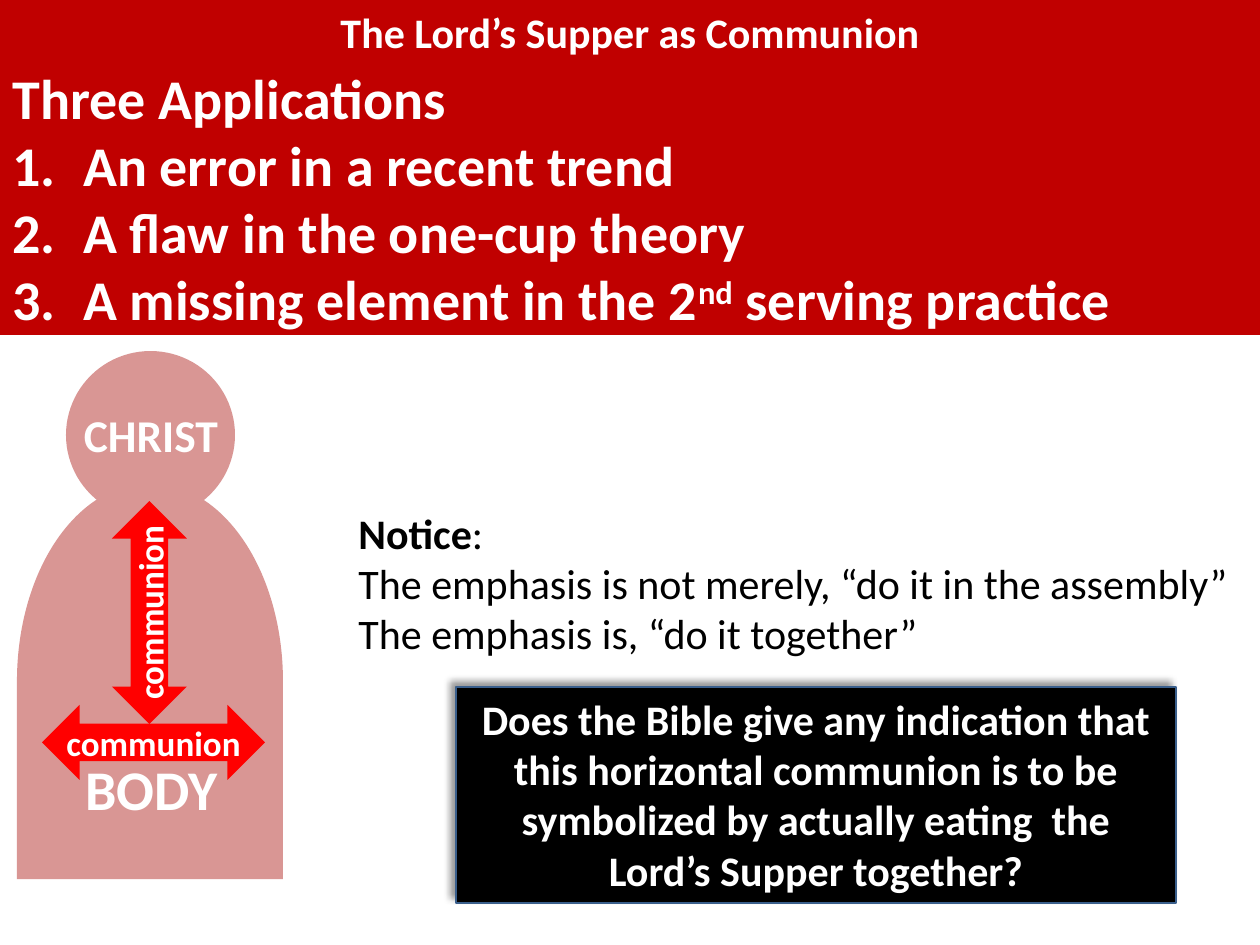
from dataclasses import dataclass

from pptx import Presentation, util as u
from pptx.dml.color import RGBColor
from pptx.enum import shapes as sh, text as tx
from pptx.oxml import parse_xml
from pptx.oxml.ns import nsdecls, qn

SCALE = 914400 / 126
RED = RGBColor(0xC0, 0x00, 0x00)
PINK = RGBColor(0xD9, 0x96, 0x94)
BRIGHT = RGBColor(0xFF, 0x00, 0x00)
BLACK = RGBColor(0x00, 0x00, 0x00)
WHITE = RGBColor(0xFF, 0xFF, 0xFF)
BLUE = RGBColor(0x3A, 0x5F, 0x8C)
KIND = sh.MSO_SHAPE
LEFT, MID = tx.PP_ALIGN.LEFT, tx.PP_ALIGN.CENTER


@dataclass(frozen=True)
class Box:
    x: int
    y: int
    w: int
    h: int

    def emu(self) -> tuple[u.Emu, ...]:
        return tuple(u.Emu(round(n * SCALE)) for n in (self.x, self.y, self.w, self.h))


@dataclass(frozen=True)
class Part:
    text: str
    bold: bool = True
    lift: int = 0


@dataclass(frozen=True)
class Label:
    box: Box
    text: str
    size: int


Lines = list[list[Part]]


def write(frame, lines: Lines, size: int, color: RGBColor, align) -> None:
    frame.auto_size = tx.MSO_AUTO_SIZE.NONE
    for i, parts in enumerate(lines):
        para = frame.add_paragraph() if i else frame.paragraphs[0]
        para.alignment = align
        para.space_before = u.Pt(0)
        for part in parts:
            run = para.add_run()
            run.text = part.text
            font = run.font
            font.name, font.size, font.bold = "Calibri", u.Pt(size), part.bold
            font.color.rgb = color
            if part.lift:
                run._r.get_or_add_rPr().set("baseline", str(part.lift * 1000))


def fill(shape, color: RGBColor) -> None:
    shape.fill.solid()
    shape.fill.fore_color.rgb = color


def add_form(slide, kind, box: Box, color: RGBColor, turn: int = 0):
    form = slide.shapes.add_shape(kind, *box.emu())
    form.shadow.inherit = False
    form.rotation = turn
    fill(form, color)
    form.line.fill.background()
    return form


def add_text(slide, box: Box, lines: Lines, size: int, color: RGBColor,
             align=MID, wrap: bool = True) -> None:
    frame = slide.shapes.add_textbox(*box.emu()).text_frame
    frame.word_wrap = wrap
    write(frame, lines, size, color, align)


def add_arrow(slide, box: Box, turn: int) -> None:
    """Draw a double arrow whose label runs along its shaft."""
    arrow = add_form(slide, KIND.UP_DOWN_ARROW, box, BRIGHT, turn)
    frame = arrow.text_frame
    frame.margin_left = frame.margin_right = frame.margin_top = frame.margin_bottom = 0
    frame.vertical_anchor = tx.MSO_ANCHOR.MIDDLE
    arrow.element.find(".//" + qn("a:bodyPr")).set("vert", "vert270")
    write(frame, [[Part("communion")]], 20, WHITE, MID)


def fill_band(holder, box: Box, lines: Lines, size: int, align) -> None:
    holder.left, holder.top, holder.width, holder.height = box.emu()
    fill(holder, RED)
    holder.text_frame.vertical_anchor = tx.MSO_ANCHOR.TOP
    write(holder.text_frame, lines, size, WHITE, align)


def number(para, on: bool) -> None:
    """Give a paragraph a hanging number, or no bullet at all."""
    props = para._p.get_or_add_pPr()
    dent = u.Inches(0.56) if on else 0
    props.set("marL", str(dent))
    props.set("indent", str(-dent))
    mark = 'buAutoNum type="arabicPeriod"' if on else "buNone"
    props.append(parse_xml(f"<a:{mark} {nsdecls('a')}/>"))


def cast_shadow(shape) -> None:
    effects = shape.element.spPr.find(qn("a:effectLst"))
    effects.append(parse_xml(
        f'<a:outerShdw {nsdecls("a")} blurRad="{u.Pt(4)}" dist="{u.Pt(5)}" '
        f'dir="{225 * 60000}" algn="br" rotWithShape="0">'
        '<a:srgbClr val="000000"><a:alpha val="40000"/></a:srgbClr></a:outerShdw>'))


def add_band(slide) -> None:
    title, body = slide.placeholders
    fill_band(title, Box(0, 0, 1260, 57),
              [[Part("The Lord’s Supper as Communion")]], 24, MID)
    points = [
        [Part("Three Applications")],
        [Part("An error in a recent trend")],
        [Part("A flaw in the one-cup theory")],
        [Part("A missing element in the 2"), Part("nd", lift=30),
         Part(" serving practice")],
    ]
    fill_band(body, Box(0, 57, 1260, 278), points, 32, LEFT)
    for i, para in enumerate(body.text_frame.paragraphs):
        number(para, i > 0)


def add_figure(slide) -> None:
    add_form(slide, KIND.FLOWCHART_DELAY, Box(-48, 548, 396, 266), PINK, 270)
    add_form(slide, KIND.OVAL, Box(66, 351, 169, 168), PINK)
    add_arrow(slide, Box(112, 501, 75, 223), 0)
    add_arrow(slide, Box(116, 631, 75, 223), 90)
    for tag in (Label(Box(71, 401, 160, 68), "CHRIST", 26),
                Label(Box(72, 748, 159, 81), "BODY", 32)):
        add_text(slide, tag.box, [[Part(tag.text)]], tag.size, WHITE, wrap=False)


def add_notes(slide) -> None:
    ask = add_form(slide, KIND.RECTANGLE, Box(456, 687, 720, 216), BLACK)
    ask.line.color.rgb = BLUE
    ask.line.width = u.Pt(0.75)
    cast_shadow(ask)
    ask.text_frame.vertical_anchor = tx.MSO_ANCHOR.TOP
    ask.text_frame.word_wrap = True
    write(ask.text_frame, [[Part(
        "Does the Bible give any indication that this horizontal communion is to be "
        "symbolized by actually eating  the Lord’s Supper together?")]],
        24, WHITE, MID)
    add_text(slide, Box(346, 501, 914, 165), [
        [Part("Notice"), Part(":", bold=False)],
        [Part("The emphasis is not merely, “do it in the assembly”", bold=False)],
        [Part("The emphasis is, “do it together”", bold=False)],
    ], 24, BLACK, LEFT)


def main() -> None:
    deck = Presentation()
    deck.slide_width, deck.slide_height = u.Inches(10), u.Inches(7.5)
    slide = deck.slides.add_slide(deck.slide_layouts[1])
    add_band(slide)
    add_figure(slide)
    add_notes(slide)
    deck.save("out.pptx")


if __name__ == "__main__":
    main()
